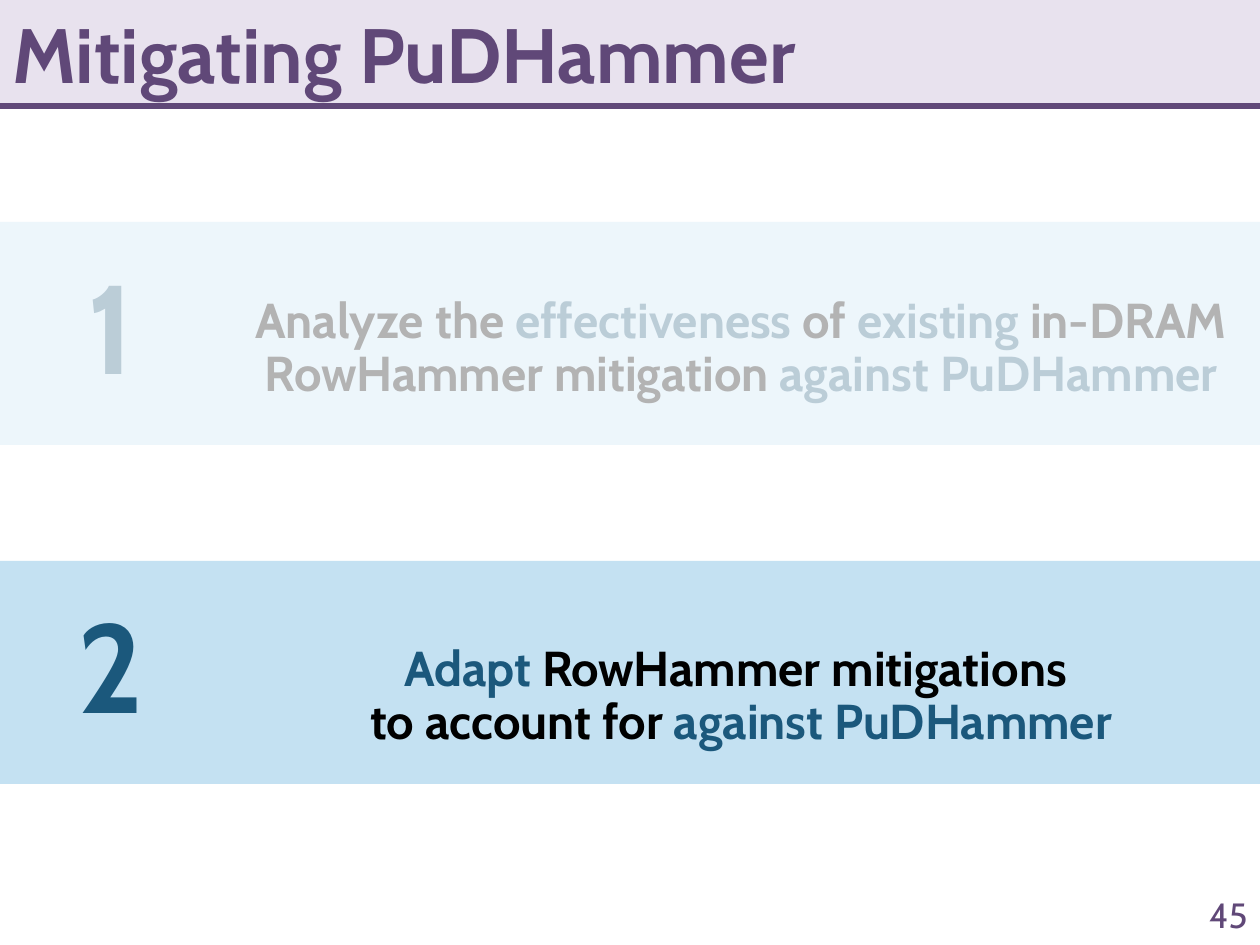
from lxml import etree
from pptx import Presentation
from pptx import util as u
from pptx.dml.color import RGBColor
from pptx.enum import shapes, text
from pptx.oxml.ns import qn

PX = u.Inches(1) // 126
WIDE, HIGH = 1260, 945
BAR = 106
SPLIT, TALL = 222, 223
FONT = "Cabin"
COLORS = {"plum": "604878", "lilac": "E8E2EE", "sky": "C4E1F2",
          "navy": "1B587C", "black": "000000", "white": "FFFFFF"}
BREAK = None
CARDS = [
    (222, "1", 74, [("Analyze the ", "black"), ("effectiveness", "navy"),
                    (" of ", "black"), ("existing", "navy"),
                    (" in-DRAM RowHammer mitigation ", "black"),
                    ("against PuDHammer", "navy")]),
    (561, "2", 83, [("Adapt ", "navy"),
                    ("RowHammer mitigations ", "black"), BREAK,
                    ("to account for ", "black"),
                    ("against PuDHammer", "navy")]),
]


def rgb(name):
    return RGBColor.from_string(COLORS[name])


def style(para, size, color=None, bold=True, align=text.PP_ALIGN.CENTER):
    para.alignment = align
    font = para.font
    font.name, font.size, font.bold = FONT, u.Pt(size), bold
    if color:
        font.color.rgb = rgb(color)


def add_rect(slide, x, y, w, h, color):
    box = slide.shapes.add_shape(shapes.MSO_SHAPE.RECTANGLE,
                                 *(n * PX for n in (x, y, w, h)))
    box.shadow.inherit = False
    box.fill.solid()
    box.fill.fore_color.rgb = rgb(color)
    box.line.fill.background()
    box.text_frame.word_wrap = True
    return box


def add_parts(para, parts):
    """Add (words, color) runs, with a line break at each BREAK."""
    for part in parts:
        if part is BREAK:
            para.add_line_break()
            continue
        words, color = part
        run = para.add_run()
        run.text = words
        run.font.color.rgb = rgb(color)


def add_card(slide, top, digit, inset, parts):
    body = add_rect(slide, SPLIT, top, WIDE - SPLIT, TALL, "sky").text_frame
    body.vertical_anchor = text.MSO_ANCHOR.TOP
    body.margin_top = inset * PX
    para = body.paragraphs[0]
    para.line_spacing = 0.9
    style(para, 28)
    add_parts(para, parts)

    label = add_rect(slide, 0, top, SPLIT, TALL, "sky").text_frame
    label.vertical_anchor = text.MSO_ANCHOR.MIDDLE
    label.text = digit
    label.paragraphs[0].line_spacing = 0.9
    style(label.paragraphs[0], 72, "navy")


def add_veil(slide, top, height):
    """Fade what lies below with a white sheet, 70% opaque."""
    veil = add_rect(slide, 0, top, WIDE, height, "white")
    tint = veil.element.spPr.find(qn("a:solidFill"))[0]
    etree.SubElement(tint, qn("a:alpha"), val="70000")


def add_title(slide, words):
    band = add_rect(slide, 0, 0, WIDE, BAR, "lilac")
    rule = slide.shapes.add_connector(shapes.MSO_CONNECTOR.STRAIGHT,
                                      0, BAR * PX, WIDE * PX, BAR * PX)
    rule.line.color.rgb = rgb("plum")
    rule.line.width = u.Pt(3.5)
    etree.SubElement(rule.element.spPr, qn("a:effectLst"))

    title = slide.shapes.title
    title.left, title.top = 0, 0
    title.width, title.height = WIDE * PX, BAR * PX
    band.element.getparent().append(title.element)
    frame = title.text_frame
    frame.text = words
    frame.auto_size = text.MSO_AUTO_SIZE.NONE
    frame.vertical_anchor = text.MSO_ANCHOR.MIDDLE
    style(frame.paragraphs[0], 44, "plum", align=text.PP_ALIGN.LEFT)


def add_number(slide, digits):
    box = slide.shapes.add_textbox(1124 * PX, 890 * PX, 136 * PX, 50 * PX)
    frame = box.text_frame
    frame.word_wrap = True
    frame.vertical_anchor = text.MSO_ANCHOR.MIDDLE
    frame.text = digits
    style(frame.paragraphs[0], 20, "plum", False, text.PP_ALIGN.RIGHT)


def main():
    deck = Presentation()
    deck.slide_width, deck.slide_height = WIDE * PX, HIGH * PX
    slide = deck.slides.add_slide(deck.slide_layouts[5])
    add_title(slide, "Mitigating PuDHammer")
    add_number(slide, "45")
    for card in CARDS:
        add_card(slide, *card)
    add_veil(slide, 146, 375)
    deck.save("out.pptx")


if __name__ == "__main__":
    main()
